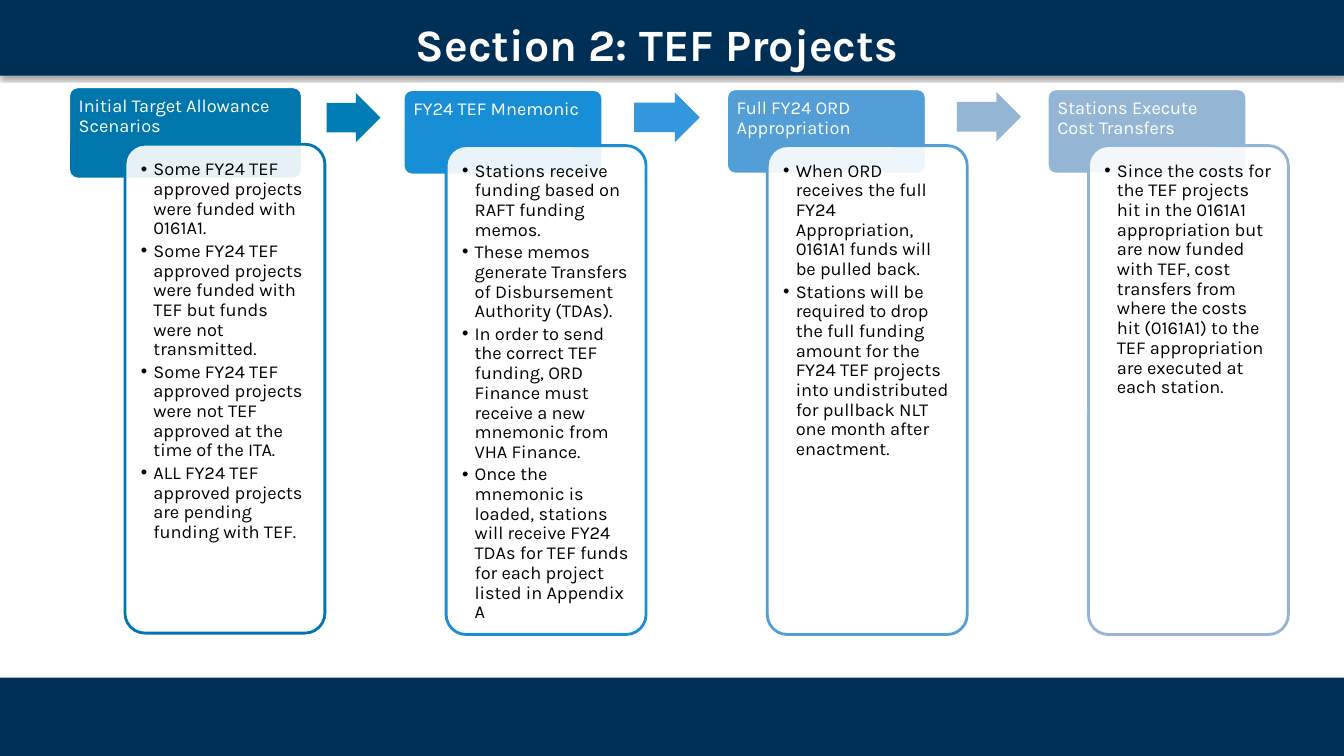
from lxml import etree
from pptx import Presentation
from pptx.dml.color import RGBColor
from pptx.enum import shapes, text
from pptx.oxml.ns import qn
from pptx.util import Pt

FONT = "Karla"
COLORS = {"navy": "002F56", "white": "FFFFFF", "black": "000000"}
PANEL_LEFT, PANEL_STEP, PANEL_WIDTH, PANEL_HEIGHT = 89.3, 229.4, 142.8, 349.2
INSET = 7.2

# Each step: heading, colour, header box, panel top, bullets
STEPS = [
    ("Initial Target Allowance Scenarios", "0077AC", (49, 62, 167, 66), 103, [
        "Some FY24 TEF approved projects were funded with 0161A1.",
        "Some FY24 TEF approved projects were funded with TEF but funds were not transmitted.",
        "Some FY24 TEF approved projects were not TEF approved at the time of the ITA.",
        "ALL FY24 TEF approved projects are pending funding with TEF."]),
    ("FY24 TEF Mnemonic", "178ED5", (288, 64, 142.6, 61), 104, [
        "Stations receive funding based on RAFT funding memos.",
        "These memos generate Transfers of Disbursement Authority (TDAs).",
        "In order to send the correct TEF funding, ORD Finance must receive a new "
        "mnemonic from VHA Finance.",
        "Once the mnemonic is loaded, stations will receive FY24 TDAs for TEF funds "
        "for each project listed in Appendix A"]),
    ("Full FY24 ORD Appropriation", "549ED7", (519, 63.4, 142.6, 61), 104, [
        "When ORD receives the full FY24 Appropriation, 0161A1 funds will be pulled back.",
        "Stations will be required to drop the full funding amount for the FY24 TEF "
        "projects into undistributed for pullback NLT one month after enactment."]),
    ("Stations Execute Cost Transfers", "95B5D4", (748, 63.4, 142.6, 61), 104, [
        "Since the costs for the TEF projects hit in the 0161A1 appropriation but are now "
        "funded with TEF, cost transfers from where the costs hit (0161A1) to the TEF "
        "appropriation are executed at each station."]),
]
ARROWS = [((233.4, 66.4, 38.5, 35.3), "007DB5"),
          ((453, 66.2, 46.8, 35.3), "3398DD"),
          ((683.4, 65.8, 46, 35.3), "95B5D4")]


def rgb(color):
    return RGBColor.from_string(color)


def add_block(slide, kind, box, fill, line=None):
    sp = slide.shapes.add_shape(kind, *map(Pt, box))
    sp.shadow.inherit = False
    sp.fill.solid()
    sp.fill.fore_color.rgb = rgb(fill)
    if line:
        sp.line.color.rgb = rgb(line)
        sp.line.width = Pt(2)
    else:
        sp.line.fill.background()
    return sp


def add_rounded(slide, box, fill, line):
    sp = add_block(slide, shapes.MSO_SHAPE.ROUNDED_RECTANGLE, box, fill, line)
    sp.adjustments[0] = 0.1
    return sp


def place(slide, sp, box):
    """Move a placeholder to its box and to the front."""
    sp.left, sp.top, sp.width, sp.height = map(Pt, box)
    slide.shapes._spTree.append(sp._element)


def set_frame(tf, anchor, inset):
    tf.word_wrap = True
    tf.auto_size = text.MSO_AUTO_SIZE.NONE
    tf.vertical_anchor = anchor
    tf.margin_left = tf.margin_top = tf.margin_right = tf.margin_bottom = Pt(inset)


def style(p, size, color, align, bold=False):
    p.alignment = align
    p.space_before = Pt(0)
    for r in p.runs:
        r.font.name, r.font.size, r.font.bold = FONT, Pt(size), bold
        r.font.color.rgb = rgb(color)


def add_bullet(p):
    pPr = p._p.get_or_add_pPr()
    pPr.set("marL", str(Pt(9)))
    pPr.set("indent", str(-Pt(9)))
    etree.SubElement(pPr, qn("a:buFont"), typeface="Arial")
    etree.SubElement(pPr, qn("a:buChar"), char="•")


def add_bands(slide):
    rect = shapes.MSO_SHAPE.RECTANGLE
    add_block(slide, rect, (0, 484, 960, 56), COLORS["navy"])
    band = add_block(slide, rect, (0, 0, 960, 54), COLORS["navy"])
    effects = band._element.spPr.find(qn("a:effectLst"))
    shadow = etree.SubElement(effects, qn("a:outerShdw"), blurRad=str(Pt(3.1)),
                              dist=str(Pt(1.8)), dir="5400000", rotWithShape="0")
    black = etree.SubElement(shadow, qn("a:srgbClr"), val=COLORS["black"])
    etree.SubElement(black, qn("a:alpha"), val="35000")


def add_title(slide, box):
    title = slide.shapes.title
    place(slide, title, box)
    tf = title.text_frame
    tf.text = "Section 2: TEF Projects"
    set_frame(tf, text.MSO_ANCHOR.MIDDLE, 3.6)
    style(tf.paragraphs[0], 32, COLORS["white"], text.PP_ALIGN.CENTER, bold=True)


def add_header(slide, box, heading, color):
    tf = add_rounded(slide, box, color, COLORS["white"]).text_frame
    tf.text = heading
    # The rounded corners already inset the text by 2.9 % of the height
    set_frame(tf, text.MSO_ANCHOR.TOP, INSET - 0.029 * box[3])
    p = tf.paragraphs[0]
    style(p, 13, COLORS["white"], text.PP_ALIGN.LEFT)
    p.line_spacing = 0.9


def add_panel(slide, body, box, bullets, color):
    panel = add_rounded(slide, box, COLORS["white"], color)
    white = panel._element.spPr.find(qn("a:solidFill"))[0]
    etree.SubElement(white, qn("a:alpha"), val="90000")

    left, top, width, height = box
    place(slide, body, (left + 4.1, top + 4.1, width - 8.2, height - 8.2))
    tf = body.text_frame
    tf.text = "\n".join(bullets)
    set_frame(tf, text.MSO_ANCHOR.TOP, INSET)
    for p in tf.paragraphs:
        add_bullet(p)
        style(p, 13, COLORS["black"], text.PP_ALIGN.LEFT)
        p.line_spacing = 0.9
        p.space_after = Pt(2)


def add_arrow(slide, box, color):
    arrow = add_block(slide, shapes.MSO_SHAPE.RIGHT_ARROW, box, color)
    arrow.adjustments[0] = 0.6
    arrow.adjustments[1] = 0.5


def main():
    prs = Presentation()
    prs.slide_width, prs.slide_height = Pt(960), Pt(540)
    # The comparison layout offers a title and four bodies
    slide = prs.slides.add_slide(prs.slide_layouts[4])
    bodies = [sp for sp in slide.placeholders if sp.placeholder_format.idx > 0]
    add_bands(slide)
    add_title(slide, (97.2, 8, 744.5, 46))
    for i, (heading, color, header_box, top, bullets) in enumerate(STEPS):
        add_header(slide, header_box, heading, color)
        panel_box = (PANEL_LEFT + i * PANEL_STEP, top, PANEL_WIDTH, PANEL_HEIGHT)
        add_panel(slide, bodies[i], panel_box, bullets, color)
    for box, color in ARROWS:
        add_arrow(slide, box, color)
    prs.save("out.pptx")


if __name__ == "__main__":
    main()
